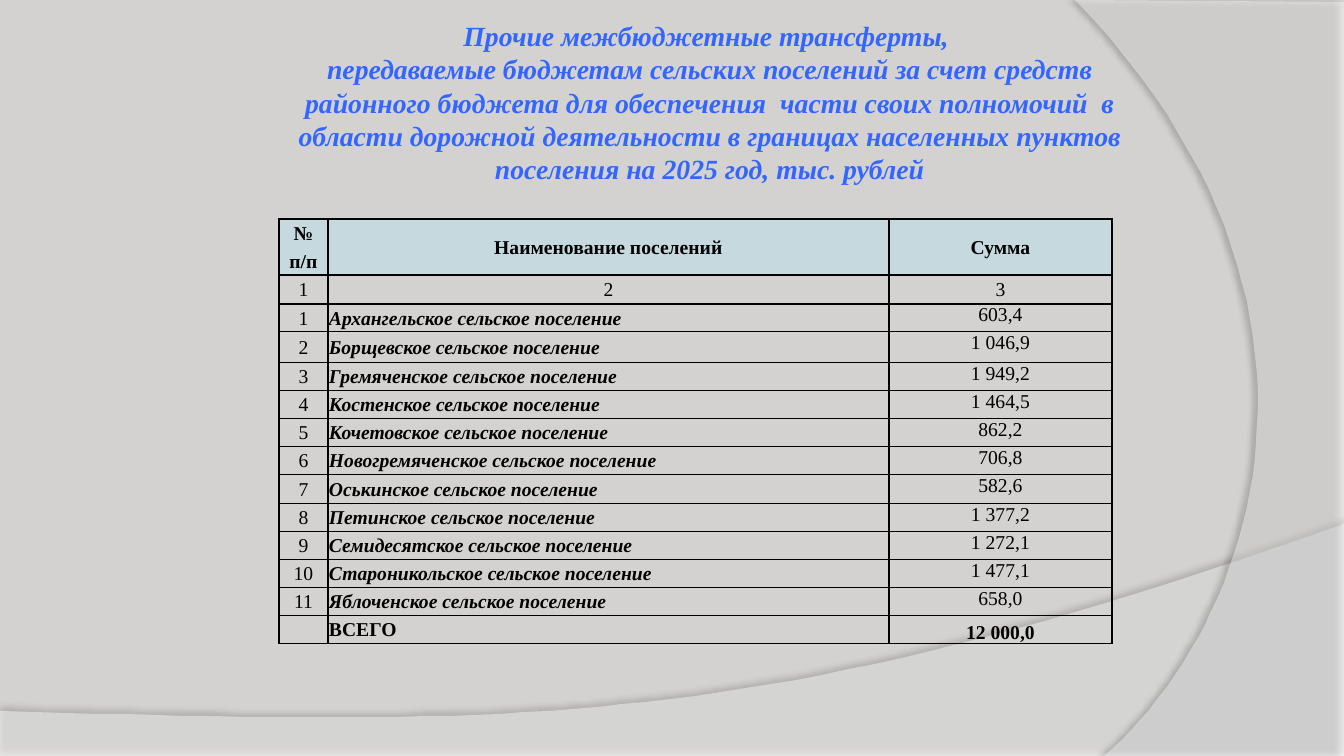
from lxml.etree import SubElement
from pptx import Presentation
from pptx.dml.color import RGBColor
from pptx.enum.text import MSO_ANCHOR, PP_ALIGN
from pptx.oxml.ns import qn
from pptx.util import Emu, Pt

PX = 914400 / 100.8
THEME = {
    "font": "Times New Roman",
    "background": RGBColor.from_string("D4D2D0"),
    "wave": RGBColor.from_string("FFFFFF"),
    "title": RGBColor.from_string("3366FF"),
    "header": RGBColor.from_string("C5D9DF"),
    "text": RGBColor.from_string("000000"),
    "border": "000000",
    "shadow": "000000",
    "title_size": Pt(19.8),
    "table_size": Pt(14),
}


def px(value):
    return Emu(round(value * PX))


def style_paragraph(paragraph, size, color, alignment, bold=False, italic=False):
    paragraph.alignment = alignment
    font = paragraph.font
    font.name, font.size = THEME["font"], size
    font.bold, font.italic = bold, italic
    font.color.rgb = color


presentation = Presentation()
presentation.slide_width, presentation.slide_height = px(1344), px(756)
slide = presentation.slides.add_slide(presentation.slide_layouts[6])
slide.background.fill.solid()
slide.background.fill.fore_color.rgb = THEME["background"]

# Translucent waves: straight corners, then one Bezier edge from the last corner
# (opacity and shadow opacity in percent, distance in points, direction in degrees)
waves = [
    ([(0, 711), (0, 756), (1344, 756), (1344, 524)],
     [(751, 735), (525, 725), (0, 711)], 45, 35, 3.5, 270),
    ([(1344, 2), (1344, 756), (1104, 756)],
     [(1256, 624), (1368, 302), (1075, 0)], 40, 45, 4, 180),
]
STEPS = 48
for corners, controls, opacity, shadow_opacity, distance, direction in waves:
    bezier = [corners[-1]] + controls
    edge = []
    for step in range(1, STEPS + 1):
        t = step / STEPS
        weights = ((1 - t) ** 3, 3 * t * (1 - t) ** 2, 3 * t * t * (1 - t), t ** 3)
        edge.append(tuple(sum(w * point[axis] for w, point in zip(weights, bezier))
                          for axis in (0, 1)))
    builder = slide.shapes.build_freeform(*corners[0], scale=PX)
    builder.add_line_segments(corners[1:] + edge, close=True)
    shape = builder.convert_to_shape()
    shape.fill.solid()
    shape.fill.fore_color.rgb = THEME["wave"]
    shape.line.fill.background()
    shape.shadow.inherit = False
    properties = shape.element.spPr
    fill_color = properties.find(qn("a:solidFill")).find(qn("a:srgbClr"))
    SubElement(fill_color, qn("a:alpha"), val=str(opacity * 1000))
    shadow = SubElement(properties.find(qn("a:effectLst")), qn("a:outerShdw"),
                        blurRad=str(Pt(4)), dist=str(Pt(distance)),
                        dir=str(direction * 60000), algn="ctr", rotWithShape="0")
    shadow_color = SubElement(shadow, qn("a:srgbClr"), val=THEME["shadow"])
    SubElement(shadow_color, qn("a:alpha"), val=str(shadow_opacity * 1000))

# Title
title = slide.shapes.add_textbox(px(256), px(18), px(907), px(168))
frame = title.text_frame
frame.word_wrap = True
frame.vertical_anchor = MSO_ANCHOR.MIDDLE
frame.margin_left = frame.margin_right = px(20)
frame.margin_top = frame.margin_bottom = 0
paragraph = frame.paragraphs[0]
paragraph.text = (
    "Прочие межбюджетные трансферты, \v"
    "передаваемые бюджетам сельских поселений за счет средств районного бюджета "
    "для обеспечения  части своих полномочий  в области дорожной деятельности "
    "в границах населенных пунктов поселения на 2025 год, тыс. рублей"
)
style_paragraph(paragraph, THEME["title_size"], THEME["title"], PP_ALIGN.CENTER, True, True)

# Table of transfers
settlements = [
    ("Архангельское", "603,4"),
    ("Борщевское", "1 046,9"),
    ("Гремяченское", "1 949,2"),
    ("Костенское", "1 464,5"),
    ("Кочетовское", "862,2"),
    ("Новогремяченское", "706,8"),
    ("Оськинское", "582,6"),
    ("Петинское", "1 377,2"),
    ("Семидесятское", "1 272,1"),
    ("Староникольское", "1 477,1"),
    ("Яблоченское", "658,0"),
]
rows = [("№", "Наименование поселений", "Сумма"), ("п/п", "", ""), ("1", "2", "3")]
rows += [(str(number), f"{name} сельское поселение", amount)
         for number, (name, amount) in enumerate(settlements, 1)]
rows.append(("", "ВСЕГО", "12 000,0"))
HEADER_ROWS, FIRST_SETTLEMENT, TOTAL = 2, 3, len(rows) - 1

column_widths = [49, 561, 223]
row_heights = [28] * len(rows)
row_heights[2] = row_heights[9] = 29
row_heights[4] = 31

table_frame = slide.shapes.add_table(len(rows), len(column_widths), px(279), px(219),
                                     px(sum(column_widths)), px(sum(row_heights)))
table = table_frame.table
table.first_row = table.horz_banding = False
for column, width in zip(table.columns, column_widths):
    column.width = px(width)
for table_row, height in zip(table.rows, row_heights):
    table_row.height = px(height)
for column in (1, 2):
    table.cell(0, column).merge(table.cell(1, column))

for row, texts in enumerate(rows):
    for column, text in enumerate(texts):
        cell = table.cell(row, column)
        is_header = row < HEADER_ROWS
        is_settlement = FIRST_SETTLEMENT <= row < TOTAL
        is_amount = column == 2 and row >= FIRST_SETTLEMENT
        is_name = column == 1 and row >= FIRST_SETTLEMENT

        cell.margin_left = cell.margin_right = px(7 if is_amount else 1)
        cell.margin_top = px(0 if is_amount else 1)
        cell.margin_bottom = 0
        cell.vertical_anchor = MSO_ANCHOR.MIDDLE
        if is_amount:
            cell.vertical_anchor = MSO_ANCHOR.TOP if is_settlement else MSO_ANCHOR.BOTTOM

        paragraph = cell.text_frame.paragraphs[0]
        if text:
            paragraph.text = text
        else:
            paragraph._p.get_or_add_endParaRPr().set("sz", "1400")
        style_paragraph(paragraph, THEME["table_size"], THEME["text"],
                        PP_ALIGN.LEFT if is_name else PP_ALIGN.CENTER,
                        bold=is_header or is_name or row == TOTAL,
                        italic=is_name and is_settlement)

        # The two header cells of the first column share an open edge
        open_side = None
        if column == 0 and is_header:
            open_side = "a:lnB" if row == 0 else "a:lnT"
        cell_properties = cell._tc.get_or_add_tcPr()
        for side in ("a:lnL", "a:lnR", "a:lnT", "a:lnB"):
            border = SubElement(cell_properties, qn(side), w=str(Pt(1)))
            if side == open_side:
                SubElement(border, qn("a:noFill"))
            else:
                border_fill = SubElement(border, qn("a:solidFill"))
                SubElement(border_fill, qn("a:srgbClr"), val=THEME["border"])
        if is_header:
            cell.fill.solid()
            cell.fill.fore_color.rgb = THEME["header"]
        else:
            cell.fill.background()

presentation.save("out.pptx")
